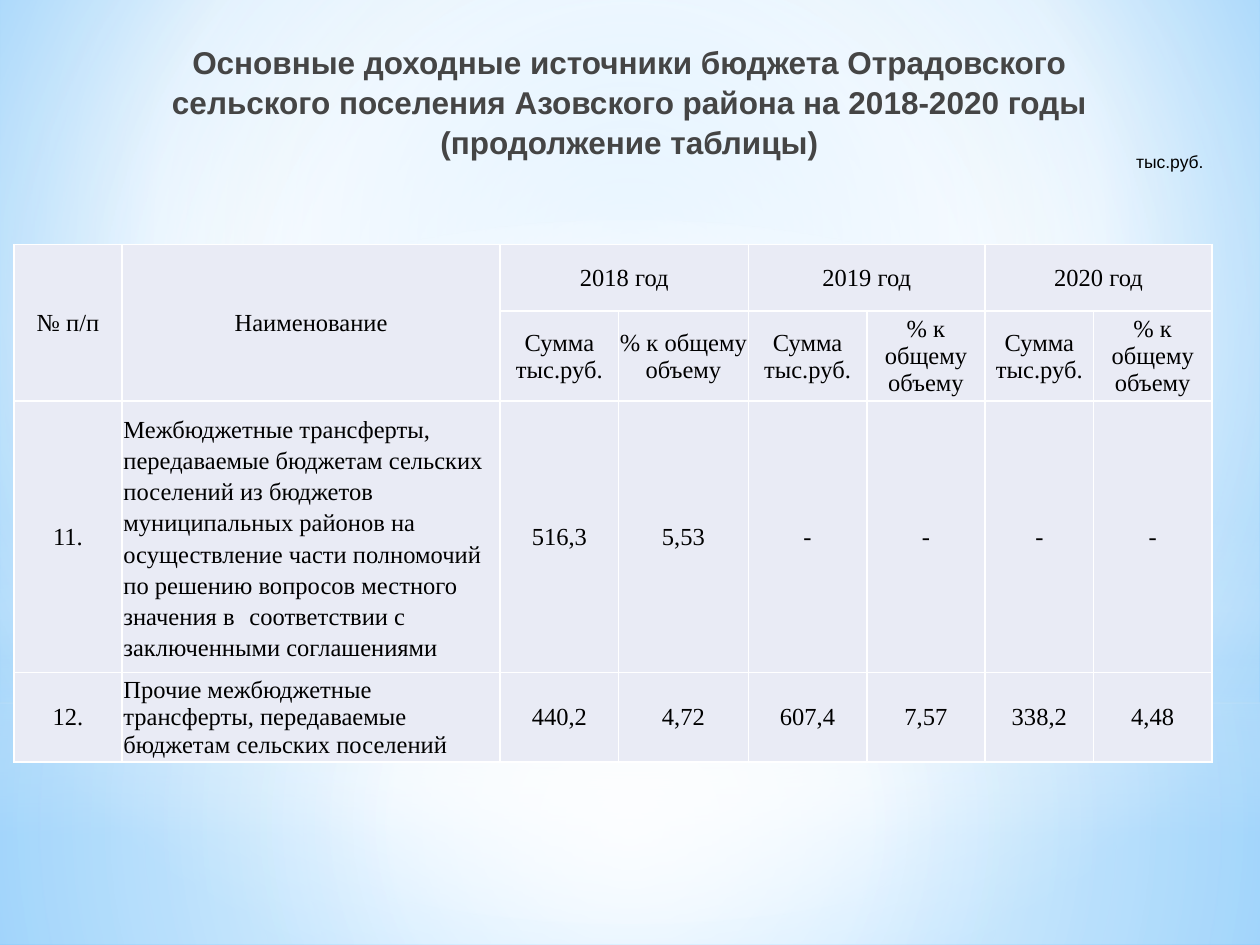
import dataclasses

import lxml.etree
import pptx
import pptx.dml.color
import pptx.enum.shapes
import pptx.enum.text
import pptx.oxml.ns
import pptx.util

ALIGN = pptx.enum.text.PP_ALIGN
ANCHOR = pptx.enum.text.MSO_ANCHOR
SHAPE = pptx.enum.shapes.MSO_SHAPE
qn = pptx.oxml.ns.qn


@dataclasses.dataclass(frozen=True)
class Theme:
    heading: str = "454545"
    ink: str = "000000"
    cell: str = "E9EBF5"
    white: str = "FFFFFF"
    sky: str = "B4DCFA"
    backdrop_inner: str = "9ED5FF"
    backdrop_outer: str = "5BB9FF"
    sans: str = "Arial"
    serif: str = "Times New Roman"
    title_size: int = 18
    table_size: int = 14
    unit_size: int = 10
    border: int = 1


def rgb(color):
    return pptx.dml.color.RGBColor.from_string(color)


def add(parent, tag, **attributes):
    element = lxml.etree.SubElement(parent, qn(tag))
    for name, value in attributes.items():
        element.set(name, str(value))
    return element


def set_gradient(fill, owner, stops, focus=None):
    """Stops are (position, colour, opacity) in percent; focus is l, t, r, b,
    and without it the gradient runs from top to bottom."""
    fill.gradient()
    gradient = owner.find(".//" + qn("a:gradFill"))
    for child in list(gradient):
        gradient.remove(child)
    stop_list = add(gradient, "a:gsLst")
    for position, color, opacity in stops:
        stop = add(stop_list, "a:gs", pos=position * 1000)
        add(add(stop, "a:srgbClr", val=color), "a:alpha", val=opacity * 1000)
    if focus:
        circle = add(gradient, "a:path", path="circle")
        add(circle, "a:fillToRect", **{side: share * 1000 for side, share in zip("ltrb", focus)})
    else:
        add(gradient, "a:lin", ang=90 * 60000, scaled=0)


class BudgetSlide:
    COLUMNS, ROWS = 10, 7.5

    def __init__(self, presentation, theme):
        self.theme = theme
        self.master = presentation.slide_master
        self.column = presentation.slide_width / self.COLUMNS
        self.row = presentation.slide_height / self.ROWS
        self.slide = presentation.slides.add_slide(presentation.slide_layouts[5])

    def place(self, left, top, width, height):
        """Turn grid columns and rows into lengths."""
        return (round(left * self.column), round(top * self.row),
                round(width * self.column), round(height * self.row))

    def style(self, frame, font, size, color, align, bold=False, spacing=None):
        for paragraph in frame.paragraphs:
            paragraph.alignment = align
            if spacing:
                paragraph.line_spacing = spacing
            for run in paragraph.runs:
                run.font.name = font
                run.font.size = pptx.util.Pt(size)
                run.font.color.rgb = rgb(color)
                run.font.bold = bold

    def background(self, stops, focus):
        set_gradient(self.master.background.fill, self.master.element, stops, focus)

    def glow(self, preset, box, stops, focus=(50, 50, 50, 50)):
        """Add a translucent layer to the master, behind the slide's content."""
        layer = self.slide.shapes.add_shape(preset, *self.place(*box))
        layer.shadow.inherit = False
        layer.line.fill.background()
        set_gradient(layer.fill, layer.element, stops, focus)
        self.master.shapes[0].element.addprevious(layer.element)

    def title(self, text, box):
        heading = self.slide.shapes.title
        heading.left, heading.top, heading.width, heading.height = self.place(*box)
        frame = heading.text_frame
        frame.text = text
        frame.word_wrap = True
        frame.auto_size = pptx.enum.text.MSO_AUTO_SIZE.NONE
        frame.vertical_anchor = ANCHOR.TOP
        self.style(frame, self.theme.sans, self.theme.title_size, self.theme.heading,
                   ALIGN.CENTER, bold=True, spacing=1.05)

    def unit_note(self, text, box):
        frame = self.slide.shapes.add_textbox(*self.place(*box)).text_frame
        frame.text = text
        frame.word_wrap = True
        self.style(frame, self.theme.sans, self.theme.unit_size, self.theme.ink, ALIGN.RIGHT)

    def cell(self, cell, text, align, spacing):
        cell.text = text
        cell.vertical_anchor = ANCHOR.MIDDLE
        cell.margin_left = cell.margin_right = cell.margin_top = pptx.util.Inches(0.01)
        cell.margin_bottom = 0
        properties = cell._tc.get_or_add_tcPr()
        for edge in ("a:lnL", "a:lnR", "a:lnT", "a:lnB"):
            line = add(properties, edge, w=pptx.util.Pt(self.theme.border))
            add(add(line, "a:solidFill"), "a:srgbClr", val=self.theme.white)
        cell.fill.solid()
        cell.fill.fore_color.rgb = rgb(self.theme.cell)
        self.style(cell.text_frame, self.theme.serif, self.theme.table_size,
                   self.theme.ink, align, spacing=spacing)

    def table(self, rows, left, top, widths, heights, merges, left_cells):
        box = self.place(left, top, sum(widths), sum(heights))
        table = self.slide.shapes.add_table(len(rows), len(widths), *box).table
        table.first_row = table.horz_banding = False
        for column, width in zip(table.columns, widths):
            column.width = round(width * self.column)
        for row, height in zip(table.rows, heights):
            row.height = round(height * self.row)
        for r, texts in enumerate(rows):
            for c, text in enumerate(texts):
                align = ALIGN.LEFT if (r, c) in left_cells else ALIGN.CENTER
                self.cell(table.cell(r, c), text, align, left_cells.get((r, c)))
        for first, last in merges:
            table.cell(*first).merge(table.cell(*last))


def main():
    presentation = pptx.Presentation()
    presentation.slide_width = pptx.util.Inches(10)
    presentation.slide_height = pptx.util.Inches(7.5)
    theme = Theme()
    white, sky = theme.white, theme.sky
    budget = BudgetSlide(presentation, theme)

    budget.background([(0, theme.backdrop_inner, 100), (60, white, 100),
                       (100, theme.backdrop_outer, 100)], (20, 10, 20, 60))
    budget.glow(SHAPE.RECTANGLE, (0, 5.58, 10, 1.92),
                [(0, white, 91), (37, white, 76), (100, sky, 79)])
    budget.glow(SHAPE.RECTANGLE, (0, 0, 10, 5.58),
                [(0, white, 89), (48, white, 62), (100, sky, 79)])
    budget.glow(SHAPE.RECTANGLE, (0, 4.12, 10, 2.5),
                [(0, white, 0), (29, white, 30), (45, sky, 40), (55, white, 26),
                 (65, sky, 60), (100, white, 0)], focus=None)
    budget.glow(SHAPE.OVAL, (0, 1.75, 10, 5.58), [(0, white, 100), (56, white, 0)])

    budget.title("Основные доходные источники бюджета Отрадовского сельского поселения "
                 "Азовского района на 2018-2020 годы (продолжение таблицы)",
                 (1.21, 0.28, 7.57, 1.25))
    budget.unit_note("тыс.руб.", (7.92, 1.15, 1.73, 0.27))

    years = ["2018 год", "2019 год", "2020 год"]
    transfers = ("Межбюджетные трансферты, передаваемые бюджетам сельских поселений "
                 "из бюджетов муниципальных районов на осуществление части полномочий "
                 "по решению вопросов местного значения в \tсоответствии "
                 "с заключенными соглашениями")
    other = "Прочие межбюджетные трансферты, передаваемые бюджетам сельских поселений"
    rows = [
        ["№ п/п", "Наименование"] + [text for year in years for text in (year, "")],
        ["", ""] + ["Сумма тыс.руб.", "% к общему объему"] * len(years),
        ["11.", transfers, "516,3", "5,53", "-", "-", "-", "-"],
        ["12.", other, "440,2", "4,72", "607,4", "7,57", "338,2", "4,48"],
    ]
    merges = [((0, c), (1, c)) for c in (0, 1)] + [((0, c), (0, c + 1)) for c in (2, 4, 6)]
    budget.table(rows, 0.11, 1.94,
                 widths=[0.86, 3, 0.94, 1.03, 0.94, 0.94, 0.86, 0.94],
                 heights=[0.53, 0.71, 2.15, 0.71],
                 merges=merges, left_cells={(2, 1): 1.15, (3, 1): 1})
    presentation.save("out.pptx")


if __name__ == "__main__":
    main()
